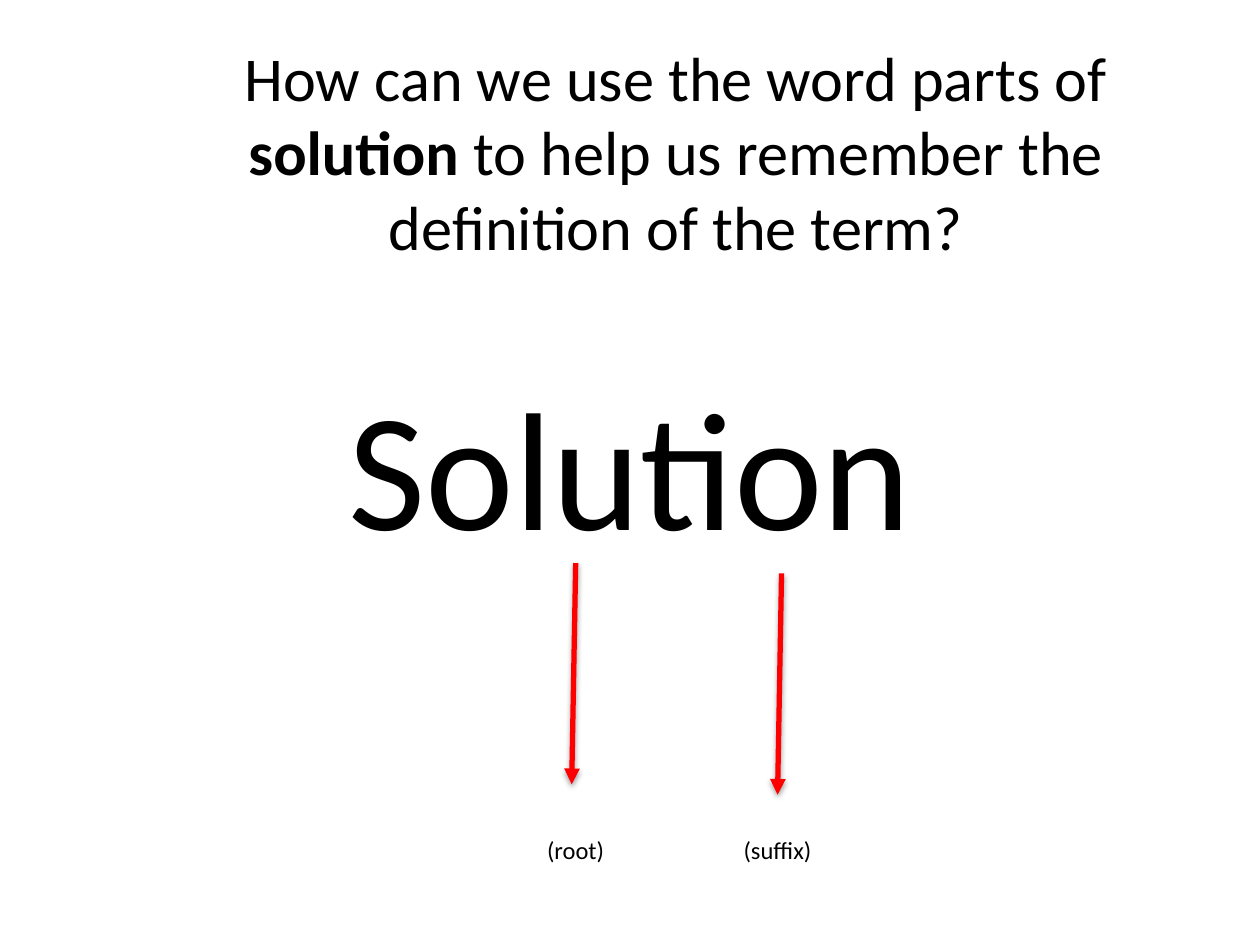
from collections import namedtuple

from lxml.etree import SubElement
from pptx import Presentation
from pptx.dml.color import RGBColor
from pptx.enum.shapes import MSO_CONNECTOR
from pptx.enum.text import MSO_ANCHOR, MSO_AUTO_SIZE, PP_ALIGN
from pptx.oxml import parse_xml
from pptx.oxml.ns import nsdecls, qn
from pptx.util import Cm, Pt

BLACK = RGBColor(0x00, 0x00, 0x00)
RED = RGBColor(0xFF, 0x00, 0x00)
WHITE = RGBColor(0xFF, 0xFF, 0xFF)
FONT = "Calibri"
LABEL_HEIGHT = 0.86
ARROW_LENGTH = 4.46
ARROW_LEAN = 0.08

Box = namedtuple("Box", "left top width height")


def place(shape, box):
    shape.left, shape.top, shape.width, shape.height = map(Cm, box)


def style_paragraph(para, size, align):
    para.alignment = align
    para.font.name = FONT
    para.font.size = Pt(size)
    para.font.color.rgb = BLACK


def add_question(page, box):
    title = page.shapes.title
    place(title, box)
    frame = title.text_frame
    frame.auto_size = MSO_AUTO_SIZE.NONE
    frame.vertical_anchor = MSO_ANCHOR.MIDDLE
    para = frame.paragraphs[0]
    for text, bold in (
        ("How can we use the word parts of ", False),
        ("solution", True),
        (" to help us remember the definition of the term?", False),
    ):
        span = para.add_run()
        span.text = text
        span.font.bold = bold
    style_paragraph(para, 35.6, PP_ALIGN.CENTER)


def add_text(page, box, text, size, align):
    shape = page.shapes.add_textbox(*map(Cm, box))
    frame = shape.text_frame
    frame.word_wrap = True
    frame.vertical_anchor = MSO_ANCHOR.MIDDLE
    para = frame.paragraphs[0]
    para.text = text
    style_paragraph(para, size, align)
    return shape


def add_arrow(page, start_x, start_y):
    arrow = page.shapes.add_connector(
        MSO_CONNECTOR.STRAIGHT,
        Cm(start_x), Cm(start_y),
        Cm(start_x - ARROW_LEAN), Cm(start_y + ARROW_LENGTH),
    )
    arrow.line.color.rgb = RED
    arrow.line.width = Pt(3)
    SubElement(arrow.line._get_or_add_ln(), qn("a:tailEnd"), type="triangle")
    arrow._element.spPr.append(parse_xml(
        f'<a:effectLst {nsdecls("a")}>'
        f'<a:outerShdw blurRad="{Pt(3.1)}" dist="{Pt(1.6)}" dir="5400000" rotWithShape="0">'
        f'<a:srgbClr val="{BLACK}"><a:alpha val="36000"/></a:srgbClr>'
        '</a:outerShdw></a:effectLst>'
    ))


def add_word_part(page, box, text, align):
    add_arrow(page, box.left + box.width / 2, box.top)
    label_top = box.top + box.height - LABEL_HEIGHT
    label = add_text(page, Box(box.left, label_top, box.width, LABEL_HEIGHT), text, 14, align)
    label.line.color.rgb = WHITE
    label.line.width = Pt(0.75)


def main():
    deck = Presentation()
    deck.slide_width, deck.slide_height = Cm(25.4), Cm(19.05)
    page = deck.slides.add_slide(deck.slide_layouts[5])
    add_question(page, Box(3, 0.91, 21.26, 4.27))
    add_text(page, Box(1.27, 7.34, 22.86, 3.99), "Solution", 96, PP_ALIGN.CENTER)
    add_word_part(page, Box(10.59, 11.35, 2.03, 6.2), "(root)", PP_ALIGN.CENTER)
    add_word_part(page, Box(14.74, 11.56, 2.03, 5.99), "(suffix)", PP_ALIGN.LEFT)
    deck.save("out.pptx")


if __name__ == "__main__":
    main()
